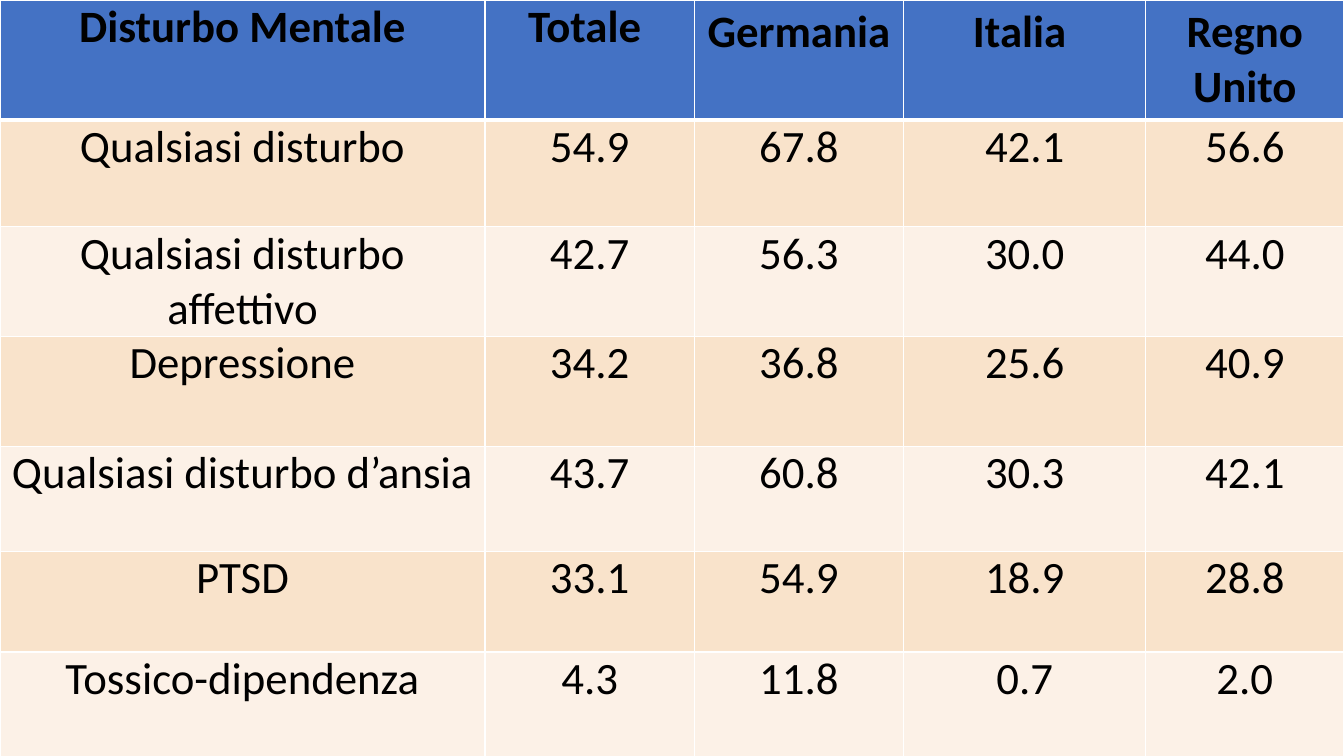
from pptx import Presentation
from pptx.dml.color import RGBColor
from pptx.enum.text import PP_ALIGN
from pptx.oxml.ns import qn
from pptx.util import Pt
from lxml import etree

CENTER = PP_ALIGN.CENTER
FONT = "Calibri"
COLORS = {
    "header": "4472C4",
    "band_dark": "F9E3CB",
    "band_light": "FCF1E7",
    "border": "FFFFFF",
    "text": "000000",
}
COLUMN_WIDTHS = [346.5, 149.5, 149.5, 173, 141.5]
ROW_HEIGHTS = [80.5, 76.5, 61, 78.5, 75, 72, 75.5]
ROWS = [
    ["Disturbo Mentale", "Totale ", "Germania", "Italia ", "Regno\nUnito"],
    ["Qualsiasi disturbo", "54.9", "67.8", "42.1", "56.6"],
    ["Qualsiasi disturbo affettivo", "42.7", "56.3", "30.0", "44.0"],
    ["Depressione", "34.2", "36.8", "25.6", "40.9"],
    ["Qualsiasi disturbo d’ansia", "43.7", "60.8", "30.3", "42.1"],
    ["PTSD", "33.1", "54.9", "18.9", "28.8"],
    ["Tossico-dipendenza", "4.3", "11.8", "0.7", "2.0"],
]


def set_borders(cell, widths):
    """Draw the cell's borders; widths maps each side (L, R, T, B) to points."""
    properties = cell._tc.get_or_add_tcPr()
    for side, width in widths.items():
        line = etree.SubElement(properties, qn(f"a:ln{side}"), w=str(Pt(width)))
        fill = etree.SubElement(line, qn("a:solidFill"))
        etree.SubElement(fill, qn("a:srgbClr"), val=COLORS["border"])


def format_cell(cell, text, fill, bold, margins):
    cell.text_frame.text = text
    cell.margin_left = cell.margin_right = Pt(margins[0])
    cell.margin_top = cell.margin_bottom = Pt(margins[1])
    cell.fill.solid()
    cell.fill.fore_color.rgb = RGBColor.from_string(COLORS[fill])
    for paragraph in cell.text_frame.paragraphs:
        paragraph.alignment = CENTER
        for run in paragraph.runs:
            run.font.name = FONT
            run.font.size = Pt(32)
            run.font.bold = bold
            run.font.color.rgb = RGBColor.from_string(COLORS["text"])


def add_disorder_table(slide, left, top, width, height):
    frame = slide.shapes.add_table(
        len(ROWS), len(COLUMN_WIDTHS), Pt(left), Pt(top), Pt(width), Pt(height))
    table = frame.table
    table.horz_banding = False
    width_scale = width / sum(COLUMN_WIDTHS)
    height_scale = height / sum(ROW_HEIGHTS)
    for column, column_width in zip(table.columns, COLUMN_WIDTHS):
        column.width = Pt(column_width * width_scale)
    for row, row_height in zip(table.rows, ROW_HEIGHTS):
        row.height = Pt(row_height * height_scale)

    for row_index, texts in enumerate(ROWS):
        is_header = row_index == 0
        band = "band_dark" if row_index % 2 else "band_light"
        borders = {"L": 1, "R": 1,
                   "T": 3 if row_index == 1 else 1,
                   "B": 3 if is_header else 1}
        for column_index, text in enumerate(texts):
            cell = table.cell(row_index, column_index)
            is_country_header = is_header and column_index >= 2
            set_borders(cell, borders)
            format_cell(cell, text, "header" if is_header else band, is_header,
                        (7.2, 3.6) if is_country_header else (5, 0))


def main():
    presentation = Presentation()
    presentation.slide_width = Pt(960)
    presentation.slide_height = Pt(540)
    slide = presentation.slides.add_slide(presentation.slide_layouts[6])
    add_disorder_table(slide, 0, 0, 960, sum(ROW_HEIGHTS))
    presentation.save("out.pptx")


if __name__ == "__main__":
    main()
